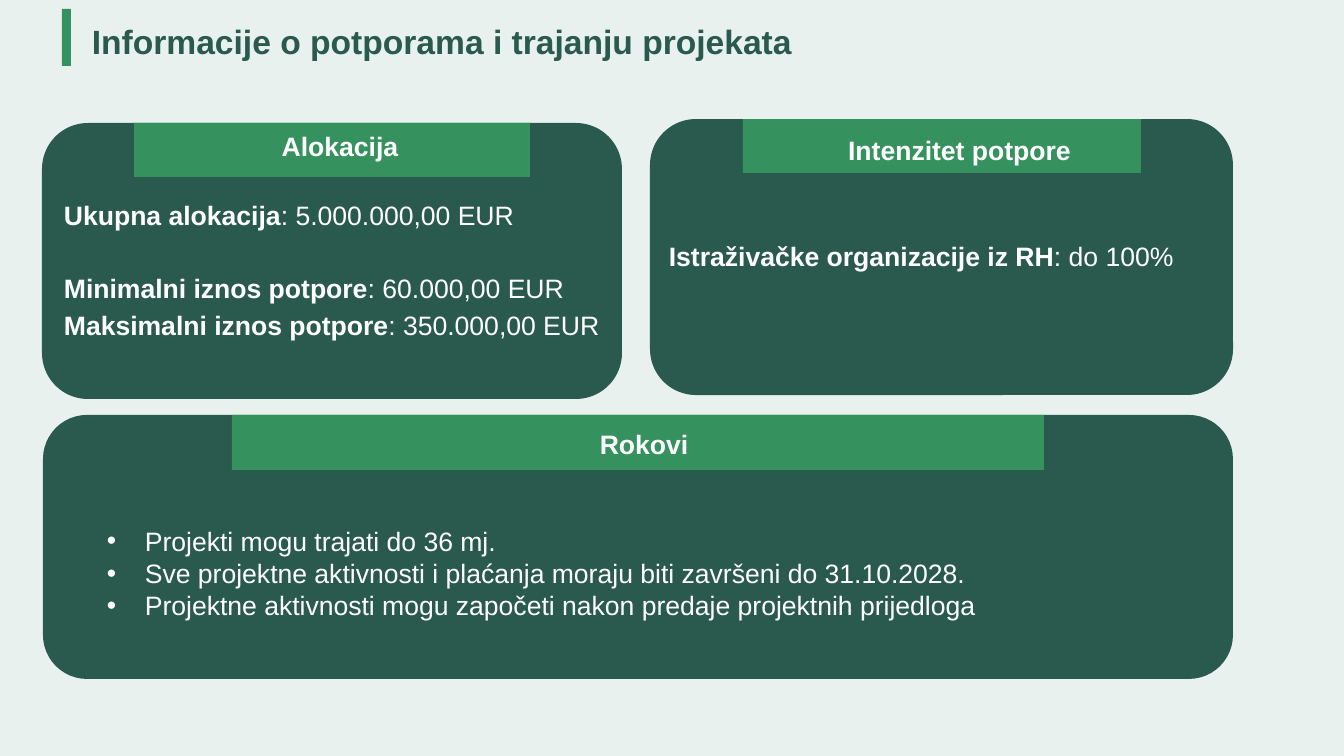
from dataclasses import dataclass

from lxml.etree import SubElement
from pptx import Presentation
from pptx.dml.color import RGBColor
from pptx.enum.shapes import MSO_SHAPE
from pptx.enum.text import MSO_ANCHOR, PP_ALIGN
from pptx.oxml.ns import qn
from pptx.slide import Slide
from pptx.text.text import TextFrame
from pptx.util import Emu, Pt

EMU_PER_PX = 914400 / 100.8
COLOURS = {"background": "E9F1EF", "panel": "295A4D", "accent": "35915D", "white": "FFFFFF"}
FONT = "Arial"
BULLET_INDENT = 38


@dataclass(frozen=True)
class Box:
    left: int
    top: int
    width: int
    height: int


@dataclass(frozen=True)
class Line:
    bold: str = ""
    regular: str = ""
    size: int = 19
    colour: str = "white"
    align: PP_ALIGN = PP_ALIGN.LEFT
    line_spacing: float | Pt = Pt(26.2)
    space_before: float = 0
    bullet: bool = False


@dataclass(frozen=True)
class Panel:
    body: Box
    band: Box
    text: Box
    lines: tuple[Line, ...]


def px(length: int) -> Emu:
    return Emu(round(length * EMU_PER_PX))


def place(box: Box) -> tuple[Emu, ...]:
    return px(box.left), px(box.top), px(box.width), px(box.height)


def heading(text: str) -> Line:
    return Line(bold=text, align=PP_ALIGN.CENTER, line_spacing=Pt(23))


def bullet(text: str, space_before: float = 0) -> Line:
    return Line(regular=text, align=PP_ALIGN.JUSTIFY, line_spacing=Pt(23),
                space_before=space_before, bullet=True)


def add_block(slide: Slide, kind: MSO_SHAPE, box: Box, colour: str) -> None:
    shape = slide.shapes.add_shape(kind, *place(box))
    shape.shadow.inherit = False
    shape.fill.solid()
    shape.fill.fore_color.rgb = RGBColor.from_string(COLOURS[colour])
    shape.line.fill.background()


def add_line(frame: TextFrame, index: int, line: Line) -> None:
    paragraph = frame.paragraphs[0] if index == 0 else frame.add_paragraph()
    formats = {"alignment": line.align, "line_spacing": line.line_spacing,
               "space_before": Pt(line.space_before)}
    for name, value in formats.items():
        setattr(paragraph, name, value)
    if line.bullet:
        properties = paragraph._p.get_or_add_pPr()
        properties.set("marL", str(px(BULLET_INDENT)))
        properties.set("indent", str(-px(BULLET_INDENT)))
        SubElement(properties, qn("a:buFont"), typeface=FONT)
        SubElement(properties, qn("a:buChar"), char="•")
    for text, bold in ((line.bold, True), (line.regular, False)):
        if text:
            run = paragraph.add_run()
            run.text = text
            for name, value in {"name": FONT, "size": Pt(line.size), "bold": bold}.items():
                setattr(run.font, name, value)
            run.font.color.rgb = RGBColor.from_string(COLOURS[line.colour])


def add_text(slide: Slide, box: Box, lines: tuple[Line, ...],
             anchor: MSO_ANCHOR = MSO_ANCHOR.TOP) -> None:
    frame = slide.shapes.add_textbox(*place(box)).text_frame
    frame.word_wrap = True
    frame.vertical_anchor = anchor
    for index, line in enumerate(lines):
        add_line(frame, index, line)


def add_panel(slide: Slide, panel: Panel) -> None:
    add_block(slide, MSO_SHAPE.ROUNDED_RECTANGLE, panel.body, "panel")
    add_block(slide, MSO_SHAPE.RECTANGLE, panel.band, "accent")
    add_text(slide, panel.text, panel.lines)


PANELS = (
    Panel(Box(42, 123, 580, 276), Box(134, 123, 396, 54), Box(54, 125, 572, 354), (
        heading("Alokacija"),
        Line("Ukupna alokacija", ": 5.000.000,00 EUR", space_before=23),
        Line("Minimalni iznos potpore", ": 60.000,00 EUR", space_before=26.2),
        Line("Maksimalni iznos potpore", ": 350.000,00 EUR"),
    )),
    Panel(Box(650, 119, 583, 276), Box(743, 119, 398, 54), Box(659, 129, 601, 261), (
        heading("Intenzitet potpore"),
        Line("Istraživačke organizacije iz RH", ": do 100%", space_before=49),
    )),
    Panel(Box(43, 415, 1190, 264), Box(232, 415, 812, 55), Box(97, 423, 1094, 204), (
        heading("Rokovi"),
        bullet("Projekti mogu trajati do 36 mj.", space_before=46),
        bullet("Sve projektne aktivnosti i plaćanja moraju biti završeni do 31.10.2028."),
        bullet("Projektne aktivnosti mogu započeti nakon predaje projektnih prijedloga"),
    )),
)
TITLE = Line("Informacije o potporama i trajanju projekata", size=24,
             colour="panel", line_spacing=0.9)


def main() -> None:
    presentation = Presentation()
    presentation.slide_width, presentation.slide_height = px(1344), px(756)
    slide = presentation.slides.add_slide(presentation.slide_layouts[6])
    slide.background.fill.solid()
    slide.background.fill.fore_color.rgb = RGBColor.from_string(COLOURS["background"])

    # Title with its accent bar
    add_text(slide, Box(82, 20, 1080, 47), (TITLE,), MSO_ANCHOR.MIDDLE)
    add_block(slide, MSO_SHAPE.RECTANGLE, Box(62, 9, 9, 57), "accent")

    # Information panels
    for panel in PANELS:
        add_panel(slide, panel)

    presentation.save("out.pptx")


if __name__ == "__main__":
    main()
